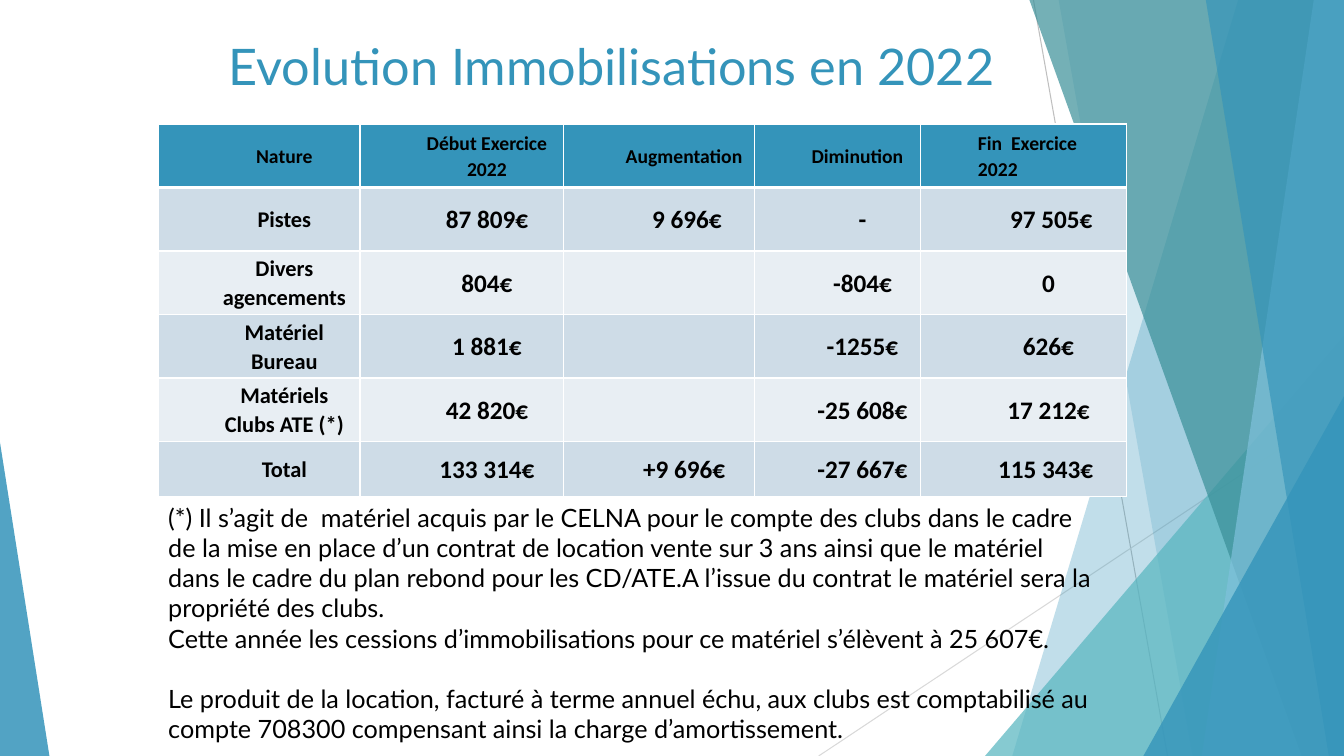
from lxml import etree
from pptx import Presentation
from pptx.dml.color import RGBColor
from pptx.enum.shapes import MSO_CONNECTOR, MSO_SHAPE
from pptx.enum.text import MSO_ANCHOR, PP_ALIGN
from pptx.oxml.ns import qn
from pptx.util import Inches, Pt

STRAIGHT = MSO_CONNECTOR.STRAIGHT
TRIANGLE = MSO_SHAPE.ISOSCELES_TRIANGLE
MIDDLE = MSO_ANCHOR.MIDDLE
LEFT, CENTER = PP_ALIGN.LEFT, PP_ALIGN.CENTER

W, H = 13.33, 7.5
BLUE, TEAL, DARK_TEAL, SKY = "3494BA", "58B6C0", "3A8F98", "7FC1DB"
BLACK, WHITE = "000000", "FFFFFF"
BANDS = ("CEDCE7", "E8EEF3")

# x of the top-left and bottom-left corners, colour, opacity
PANELS_BACK = [(12.28, 10.04, BLUE, 30), (10.5, 11.83, BLUE, 20)]
PANELS_FRONT = [(10.21, 12.91, DARK_TEAL, 70), (13.03, 11.92, SKY, 70),
                (11.96, 13.18, BLUE, 65)]

COLUMNS = [2, 2.02, 1.89, 1.65, 2.04]
ROWS = [0.63] * 5 + [0.55]
TABLE = [
    ["Nature", "Début Exercice 2022", "Augmentation", "Diminution", "Fin  Exercice 2022"],
    ["Pistes", "87 809€", " 9 696€", "-", " 97 505€"],
    ["Divers agencements", "804€", "", "-804€", "0"],
    ["Matériel Bureau", "1 881€", "", "-1255€", "626€"],
    ["Matériels Clubs ATE (*)", "42 820€", "", "-25 608€", "17 212€"],
    ["Total", "133 314€", "+9 696€", "-27 667€", "115 343€ "],
]
NOTES = [
    "(*) Il s’agit de  matériel acquis par le CELNA pour le compte des clubs dans le "
    "cadre de la mise en place d’un contrat de location vente sur 3 ans ainsi que le "
    "matériel dans le cadre du plan rebond pour les CD/ATE.A l’issue du contrat le "
    "matériel sera la propriété des clubs.",
    "Cette année les cessions d’immobilisations pour ce matériel s’élèvent à 25 607€.",
    "Le produit de la location, facturé à terme annuel échu, aux clubs est comptabilisé "
    "au compte 708300 compensant ainsi la charge d’amortissement.",
]


def rgb(color):
    return RGBColor.from_string(color)


def write(p, text, size=18, font="Lato", color=BLACK, bold=False, align=LEFT,
          before=0, after=0, spacing=None, indent=0):
    """Add a formatted run to paragraph p; spacings in points, indent in inches."""
    p.alignment = align
    p.space_before, p.space_after = Pt(before), Pt(after)
    if spacing:
        p.line_spacing = spacing
    if indent:
        pPr = p._p.get_or_add_pPr()
        pPr.set("marL", str(Inches(indent)))
        pPr.set("indent", "0")
    r = p.add_run()
    r.text = text
    r.font.size, r.font.name, r.font.bold = Pt(size), font, bold
    r.font.color.rgb = rgb(color)


def border(cell, side, width, color=WHITE):
    """Add one border; sides must come in the order L, R, T, B."""
    ln = etree.SubElement(cell._tc.get_or_add_tcPr(), qn(f"a:ln{side}"), w=str(Pt(width)))
    fill = etree.SubElement(ln, qn("a:solidFill"))
    etree.SubElement(fill, qn("a:srgbClr"), val=color)


class Deck:
    def __init__(self):
        self.prs = Presentation()
        self.prs.slide_width, self.prs.slide_height = Inches(W), Inches(H)
        self.s = self.prs.slides.add_slide(self.prs.slide_layouts[6])

    def tint(self, sp, color, opacity):
        """Fill a shape with a see-through colour, without line or shadow."""
        sp.shadow.inherit = False
        sp.line.fill.background()
        sp.fill.solid()
        sp.fill.fore_color.rgb = rgb(color)
        clr = sp._element.spPr.find(qn("a:solidFill")).find(qn("a:srgbClr"))
        etree.SubElement(clr, qn("a:alpha"), val=str(opacity * 1000))

    def line(self, x1, y1, x2, y2, color):
        cx = self.s.shapes.add_connector(
            STRAIGHT, Inches(x1), Inches(y1), Inches(x2), Inches(y2))
        cx.line.color.rgb = rgb(color)
        cx.line.width = Pt(0.75)
        etree.SubElement(cx._element.spPr, qn("a:effectLst"))

    def panel(self, top_x, bottom_x, color, opacity):
        """Full-height panel with a slanted left edge, ending at the slide's right."""
        fb = self.s.shapes.build_freeform(Inches(top_x), 0)
        corners = [(W, 0), (W, H), (bottom_x, H)]
        fb.add_line_segments([(Inches(x), Inches(y)) for x, y in corners], close=True)
        self.tint(fb.convert_to_shape(), color, opacity)

    def triangle(self, x, y, w, h, apex, color, opacity):
        sp = self.s.shapes.add_shape(TRIANGLE, Inches(x), Inches(y), Inches(w), Inches(h))
        sp.adjustments[0] = apex
        self.tint(sp, color, opacity)

    def text(self, x, y, w, h):
        tf = self.s.shapes.add_textbox(Inches(x), Inches(y), Inches(w), Inches(h)).text_frame
        tf.word_wrap = True
        return tf

    def table(self, x, y, data):
        tbl = self.s.shapes.add_table(
            len(ROWS), len(COLUMNS), Inches(x), Inches(y),
            Inches(sum(COLUMNS)), Inches(sum(ROWS))).table
        for col, width in zip(tbl.columns, COLUMNS):
            col.width = Inches(width)
        for row, height in zip(tbl.rows, ROWS):
            row.height = Inches(height)
        for i, values in enumerate(data):
            for j, value in enumerate(values):
                self.cell(tbl.cell(i, j), i, j, value)

    def cell(self, cell, i, j, value):
        header = i == 0
        cell.vertical_anchor = MIDDLE
        cell.margin_left = cell.margin_right = Inches(0.07)
        cell.margin_top = cell.margin_bottom = 0
        for side in "LRTB":
            border(cell, side, 3 if (header and side == "B") or (i == 1 and side == "T") else 1)
        cell.fill.solid()
        cell.fill.fore_color.rgb = rgb(BLUE if header else BANDS[(i - 1) % 2])
        if value:
            write(cell.text_frame.paragraphs[0], value, font="Calibri", bold=True,
                  size=14 if header else 16 if j == 0 else 18,
                  align=LEFT if header and j >= 3 else CENTER,
                  after=0 if j in (2, 3) else 8, spacing=1.07, indent=0.5)


def main():
    d = Deck()
    d.line(10.25, 0, 11.58, H, "BFBFBF")
    d.line(W, 4.03, 8.12, H, "D9D9D9")
    for panel in PANELS_BACK:
        d.panel(*panel)
    d.triangle(9.77, 3.33, 3.56, 4.17, 1, TEAL, 72)
    for panel in PANELS_FRONT:
        d.panel(*panel)
    d.triangle(11.34, 3.93, 1.99, 3.57, 1, BLUE, 80)
    d.triangle(0, 4.39, 0.49, 3.11, 0, BLUE, 85)

    title = d.text(2.17, 0.3, 9, 0.93)
    write(title.paragraphs[0], "Evolution Immobilisations en 2022", size=36, color=BLUE)
    d.table(1.57, 1.23, TABLE)

    tf = d.text(1.57, 4.93, 9.45, 2.52)
    for i, note in enumerate(NOTES):
        p = tf.add_paragraph() if i else tf.paragraphs[0]
        write(p, note, before=21.6 if i == 2 else 0)
    d.prs.save("out.pptx")


if __name__ == "__main__":
    main()
